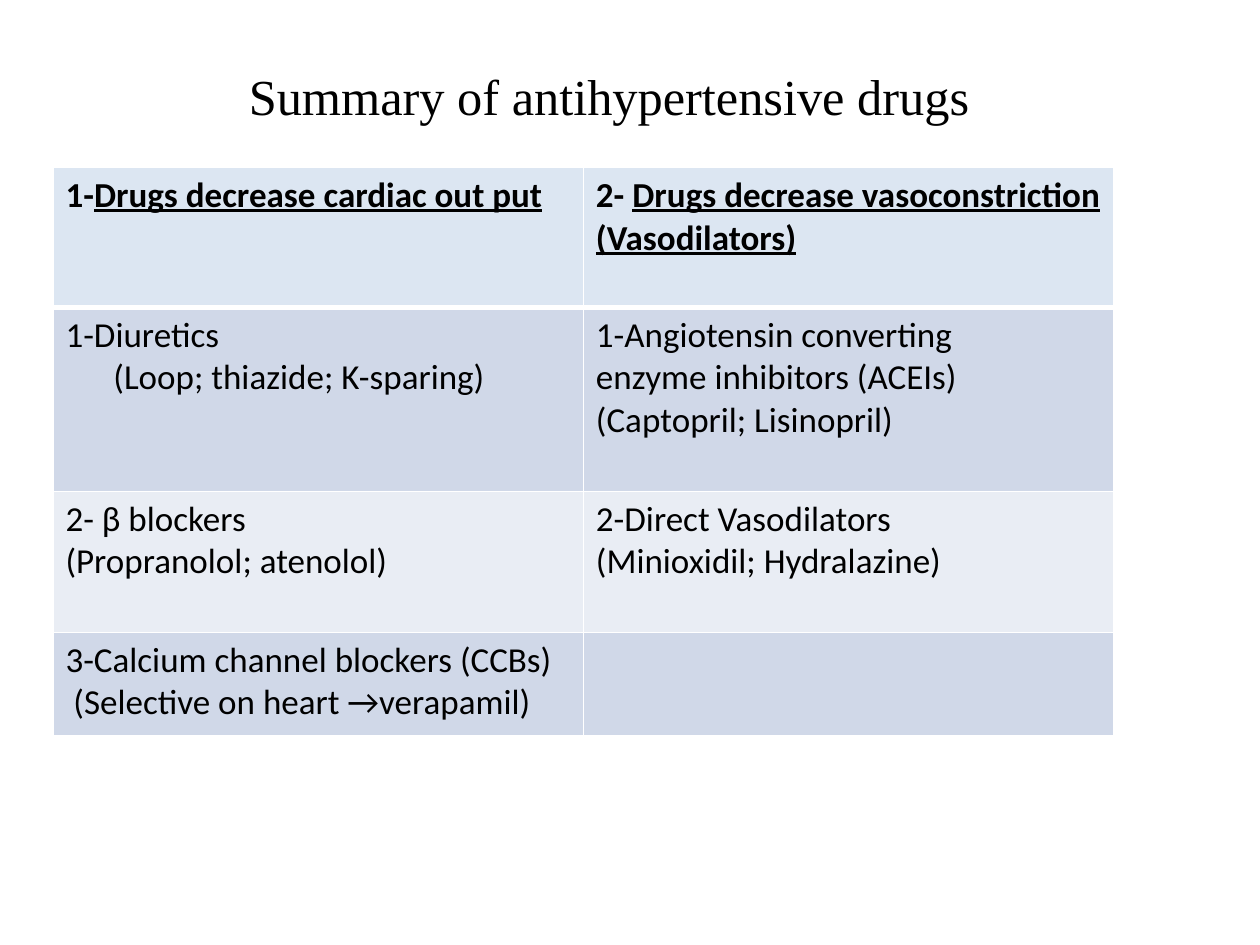
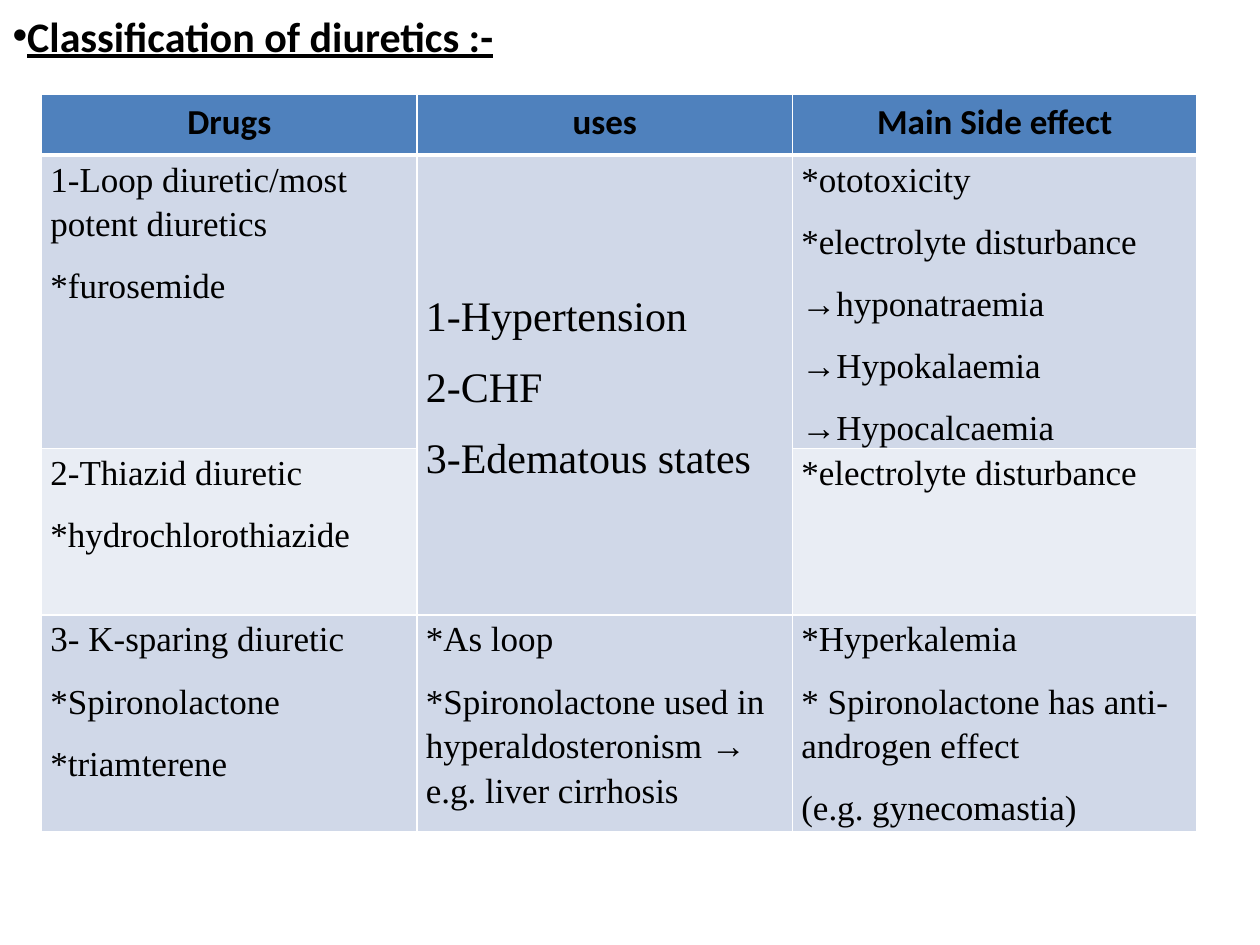
"""Build two slides of drug tables: antihypertensives and diuretics."""
from lxml import etree
from pptx import Presentation
from pptx.dml.color import RGBColor
from pptx.enum.text import MSO_ANCHOR, MSO_AUTO_SIZE, PP_ALIGN
from pptx.oxml.ns import qn
from pptx.util import Inches, Pt

LEFT, MID = PP_ALIGN.LEFT, PP_ALIGN.CENTER
TOP, CENTER, BOTTOM = MSO_ANCHOR.TOP, MSO_ANCHOR.MIDDLE, MSO_ANCHOR.BOTTOM
SANS, SERIF = "Calibri", "Times New Roman"
COLORS = {"text": "000000", "line": "FFFFFF", "pale": "DCE6F2",
          "blue": "4F81BD", "odd": "D0D8E8", "even": "E9EDF4"}

SUMMARY = {
    "title": "Summary of antihypertensive drugs",
    "box": (1, 0.17, 7.67, 1.33),
    "frame": {"vertical_anchor": BOTTOM, "margin_bottom": Inches(0.5)},
    "font": {"name": SERIF, "size": Pt(28.8), "bold": False},
    "align": MID, "bullet": False,
    "at": (0.42, 1.33), "cols": [4.21, 4.21], "rows": [1.11, 1.46, 1.12, 0.82],
    "head": "pale", "head_align": LEFT,
    "body": {"name": SANS}, "margins": (0.1, 0.05), "para": {},
    "cells": [
        [["1-|Drugs decrease cardiac out put"],
         ["2- |Drugs decrease vasoconstriction (Vasodilators)"]],
        [["1-Diuretics", "(Loop; thiazide; K-sparing)"],
         ["1-Angiotensin converting", "enzyme inhibitors (ACEIs)",
          "(Captopril; Lisinopril)"]],
        [["2- β blockers", "(Propranolol; atenolol)"],
         ["2-Direct Vasodilators", "(Minioxidil; Hydralazine)"]],
        [["3-Calcium channel blockers (CCBs)", " (Selective on heart →verapamil)"],
         []],
    ],
}

DIURETICS = {
    "title": "Classification of diuretics :-",
    "box": (0, 0, 10, 0.6),
    "frame": {"vertical_anchor": TOP, "margin_top": Inches(0.08)},
    "font": {"name": SANS, "size": Pt(24), "bold": True, "underline": True},
    "align": LEFT, "bullet": True,
    "at": (0.33, 0.75), "cols": [2.98, 2.98, 3.21], "rows": [0.48, 2.33, 1.32, 1.72],
    "head": "blue", "head_align": MID,
    "body": {"name": SERIF}, "margins": (0.07, 0),
    "para": {"line_spacing": 1.15, "space_after": Pt(10)},
    "cells": [
        [["Drugs"], ["uses"], ["Main Side effect"]],
        [["1-Loop diuretic/most potent diuretics", "*furosemide"],
         ["1-Hypertension", "2-CHF", "3-Edematous states"],
         ["*ototoxicity", "*electrolyte disturbance", "→hyponatraemia",
          "→Hypokalaemia", "→Hypocalcaemia"]],
        [["2-Thiazid diuretic", "*hydrochlorothiazide"], [],
         ["*electrolyte disturbance"]],
        [["3- K-sparing diuretic", "*Spironolactone", "*triamterene"],
         ["*As loop",
          "*Spironolactone used in hyperaldosteronism → e.g. liver cirrhosis"],
         ["*Hyperkalemia", "* Spironolactone has anti-androgen effect",
          "(e.g. gynecomastia)"]],
    ],
}


def rgb(key):
    return RGBColor.from_string(COLORS[key])


def assign(item, values):
    for name, value in values.items():
        setattr(item, name, value)


def add_run(para, text, font):
    run = para.add_run()
    run.text = text
    assign(run.font, font)
    run.font.color.rgb = rgb("text")


def indent(para, left, bullet=False):
    props = para._p.get_or_add_pPr()
    props.set("marL", str(Inches(left)))
    props.set("indent", "0")
    if bullet:
        etree.SubElement(props, qn("a:buFont")).set("typeface", "Arial")
        etree.SubElement(props, qn("a:buChar")).set("char", "•")


def add_title(slide, data):
    title = slide.shapes.title
    title.left, title.top, title.width, title.height = map(Inches, data["box"])
    frame = title.text_frame
    assign(frame, {"word_wrap": True, "auto_size": MSO_AUTO_SIZE.NONE})
    assign(frame, data["frame"])
    para = frame.paragraphs[0]
    para.alignment = data["align"]
    if data["bullet"]:
        indent(para, 0, True)
    add_run(para, data["title"], data["font"])


def add_borders(cell, row):
    widths = {"lnL": 1, "lnR": 1, "lnT": 3 if row == 1 else 1,
              "lnB": 3 if row == 0 else 1}
    props = cell._tc.get_or_add_tcPr()
    for spot, (tag, width) in enumerate(widths.items()):
        line = etree.Element(qn("a:" + tag), w=str(Pt(width)))
        fill = etree.SubElement(line, qn("a:solidFill"))
        etree.SubElement(fill, qn("a:srgbClr")).set("val", COLORS["line"])
        props.insert(spot, line)


def fill_cell(cell, texts, row, data):
    head = row == 0
    cell.fill.solid()
    cell.fill.fore_color.rgb = rgb(data["head"] if head else "odd" if row % 2 else "even")
    add_borders(cell, row)
    side, edge = (0.1, 0.05) if head else data["margins"]
    cell.margin_left = cell.margin_right = Inches(side)
    cell.margin_top = cell.margin_bottom = Inches(edge)
    cell.vertical_anchor = CENTER if cell.is_merge_origin else TOP
    font = {"size": Pt(24 if cell.is_merge_origin else 20), "bold": head}
    font.update({"name": SANS} if head else data["body"])
    frame = cell.text_frame
    for spot, text in enumerate(texts):
        para = frame.add_paragraph() if spot else frame.paragraphs[0]
        para.alignment = data["head_align"] if head else LEFT
        if not head:
            assign(para, data["para"])
        if text.startswith("(Loop"):
            indent(para, 0.38)
        for part, words in enumerate(text.split("|")):
            add_run(para, words, {**font, "underline": part == 1})


def add_grid(slide, data):
    cols, rows = data["cols"], data["rows"]
    size = data["at"] + (sum(cols), sum(rows))
    table = slide.shapes.add_table(len(rows), len(cols), *map(Inches, size)).table
    for col, width in zip(table.columns, cols):
        col.width = Inches(width)
    for row, height in zip(table.rows, rows):
        row.height = Inches(height)
    if data is DIURETICS:
        table.cell(1, 1).merge(table.cell(2, 1))
    for row, line in enumerate(data["cells"]):
        for col, texts in enumerate(line):
            cell = table.cell(row, col)
            if not cell.is_spanned:
                fill_cell(cell, texts, row, data)


def main():
    deck = Presentation()
    deck.slide_width, deck.slide_height = Inches(10), Inches(7.5)
    for data in (SUMMARY, DIURETICS):
        slide = deck.slides.add_slide(deck.slide_layouts[5])
        add_title(slide, data)
        add_grid(slide, data)
    deck.save("out.pptx")


if __name__ == "__main__":
    main()
